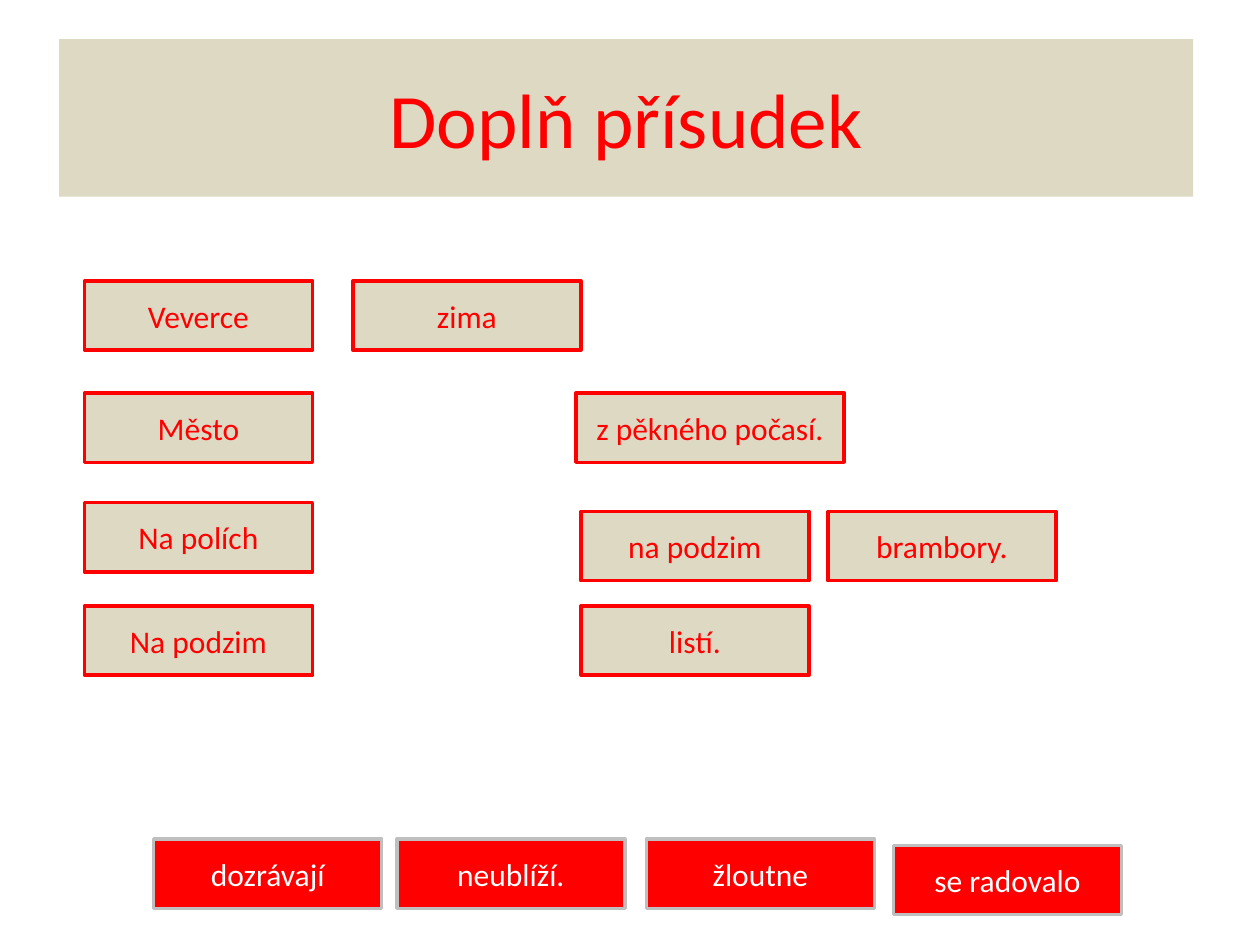
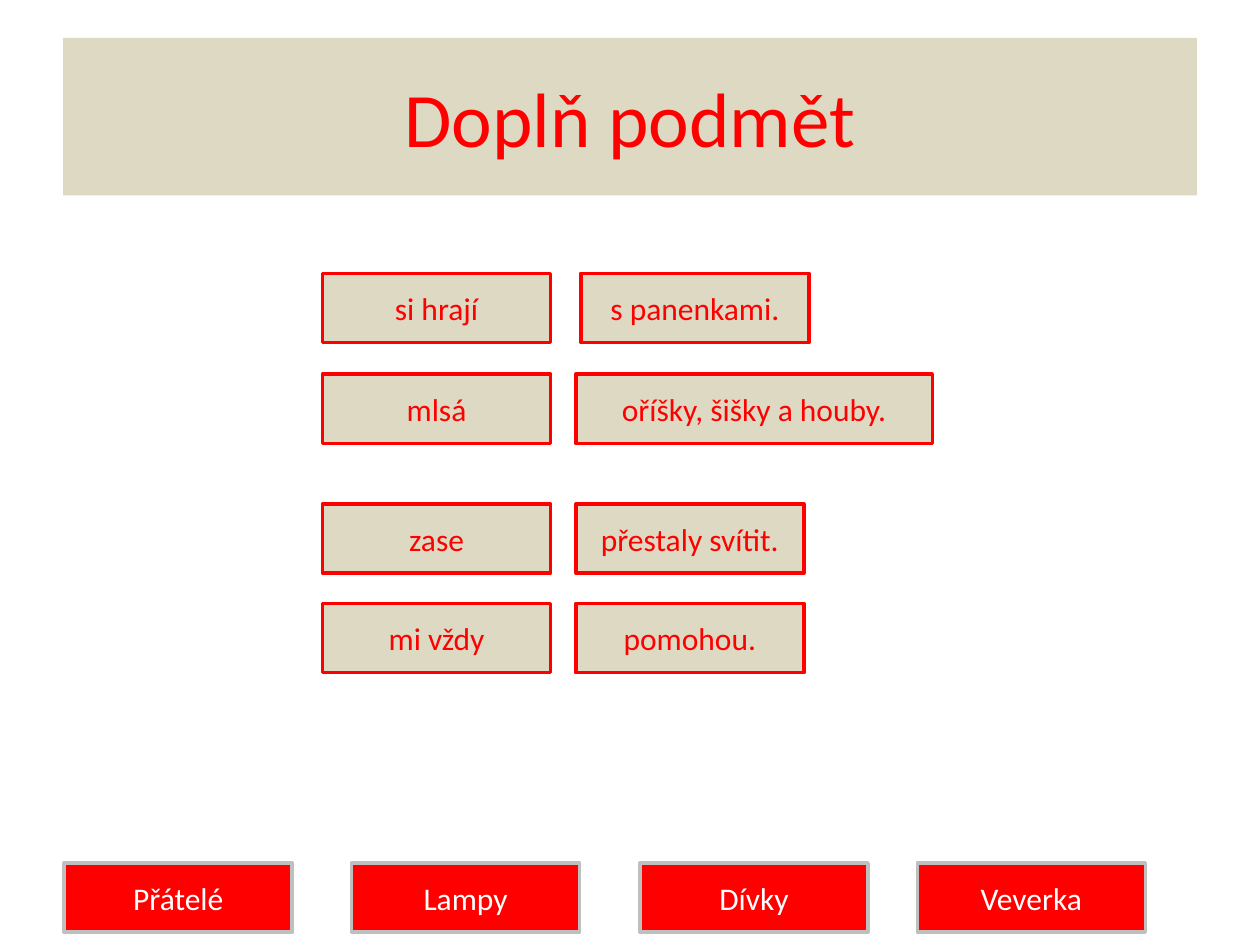
"""Build two Czech sentence-completion slides with word cards and answer cards."""
from dataclasses import dataclass

from pptx import Presentation
from pptx.dml.color import RGBColor as RGB
from pptx.enum.shapes import MSO_SHAPE as Shape
from pptx.enum.text import MSO_ANCHOR as Anchor, PP_ALIGN as Align
from pptx.util import Inches, Pt


@dataclass(frozen=True)
class Theme:
    sand: RGB = RGB(0xDD, 0xD9, 0xC3)
    red: RGB = RGB(0xFF, 0x00, 0x00)
    grey: RGB = RGB(0xBF, 0xBF, 0xBF)
    white: RGB = RGB(0xFF, 0xFF, 0xFF)
    font: str = "Calibri"
    title_size: Pt = Pt(44)
    card_size: Pt = Pt(18)
    border: Pt = Pt(2)


THEME = Theme()
SLIDE_W, SLIDE_H = Inches(10), Inches(7.5)
TITLE_W, TITLE_H = 90, 16.67
CARD_W, CARD_H = 18.1, 7.33
TITLE_ONLY = 5

# Positions are percentages of the slide's width and height.
PREDICATES = {
    "title": ("Doplň přísudek", 4.7, 4.13),
    "words": [
        (29.73, [("Veverce", 6.7), ("zima", 28)]),
        (41.6, [("Město", 6.7), ("z pěkného počasí.", 45.7, 21.3)]),
        (53.2, [("Na polích", 6.7)]),
        (54.13, [("na podzim", 46.1), ("brambory.", 65.7)]),
        (64.13, [("Na podzim", 6.7), ("listí.", 46.1)]),
    ],
    "answers": [
        (88.8, [("dozrávají", 12.2), ("neublíží.", 31.5), ("žloutne", 51.3)]),
        (89.47, [("se radovalo", 70.9)]),
    ],
}
SUBJECTS = {
    "title": ("Doplň podmět", 5, 4),
    "words": [
        (28.93, [("si hrají", 25.6), ("s panenkami.", 46.1)]),
        (39.6, [("mlsá", 25.6), ("oříšky, šišky a houby.", 45.7, 28.3)]),
        (53.33, [("zase", 25.6), ("přestaly svítit.", 45.7)]),
        (63.87, [("mi vždy", 25.6), ("pomohou.", 45.7)]),
    ],
    "answers": [
        (91.33, [("Přátelé", 5.1), ("Lampy", 27.9), ("Dívky", 50.8),
                 ("Veverka", 72.8)]),
    ],
}


def box(x, y, w, h):
    """Turn percentages of the slide into left, top, width and height."""
    return [int(size * share / 100) for size, share in
            zip((SLIDE_W, SLIDE_H, SLIDE_W, SLIDE_H), (x, y, w, h))]


def paint(sp, color):
    """Give a shape a solid fill."""
    sp.fill.solid()
    sp.fill.fore_color.rgb = color


def write(sp, text, size, color):
    """Write one centred line in a shape."""
    tf = sp.text_frame
    tf.text = text
    tf.word_wrap = True
    tf.vertical_anchor = Anchor.MIDDLE
    p = tf.paragraphs[0]
    p.alignment = Align.CENTER
    font = p.runs[0].font
    font.name, font.size, font.color.rgb = THEME.font, size, color


def add_title(s, text, x, y):
    """Fill the title placeholder as a sand-coloured band."""
    sp = s.shapes.title
    sp.left, sp.top, sp.width, sp.height = box(x, y, TITLE_W, TITLE_H)
    paint(sp, THEME.sand)
    write(sp, text, THEME.title_size, THEME.red)


def add_card(s, y, fill, line, ink, text, x, w=CARD_W):
    """Add one bordered card with a word or phrase."""
    sp = s.shapes.add_shape(Shape.RECTANGLE, *box(x, y, w, CARD_H))
    sp.shadow.inherit = False
    paint(sp, fill)
    sp.line.color.rgb = line
    sp.line.width = THEME.border
    write(sp, text, THEME.card_size, ink)


def add_cards(s, rows, fill, line, ink):
    """Add rows of cards that share one colour scheme."""
    for y, cards in rows:
        for card in cards:
            add_card(s, y, fill, line, ink, *card)


def add_exercise(prs, exercise):
    """Add a slide with a title, sentence parts and answers."""
    s = prs.slides.add_slide(prs.slide_layouts[TITLE_ONLY])
    add_title(s, *exercise["title"])
    add_cards(s, exercise["words"], THEME.sand, THEME.red, THEME.red)
    add_cards(s, exercise["answers"], THEME.red, THEME.grey, THEME.white)


def main():
    """Build and save the presentation."""
    prs = Presentation()
    prs.slide_width, prs.slide_height = SLIDE_W, SLIDE_H
    for exercise in (PREDICATES, SUBJECTS):
        add_exercise(prs, exercise)
    prs.save("out.pptx")


if __name__ == "__main__":
    main()
